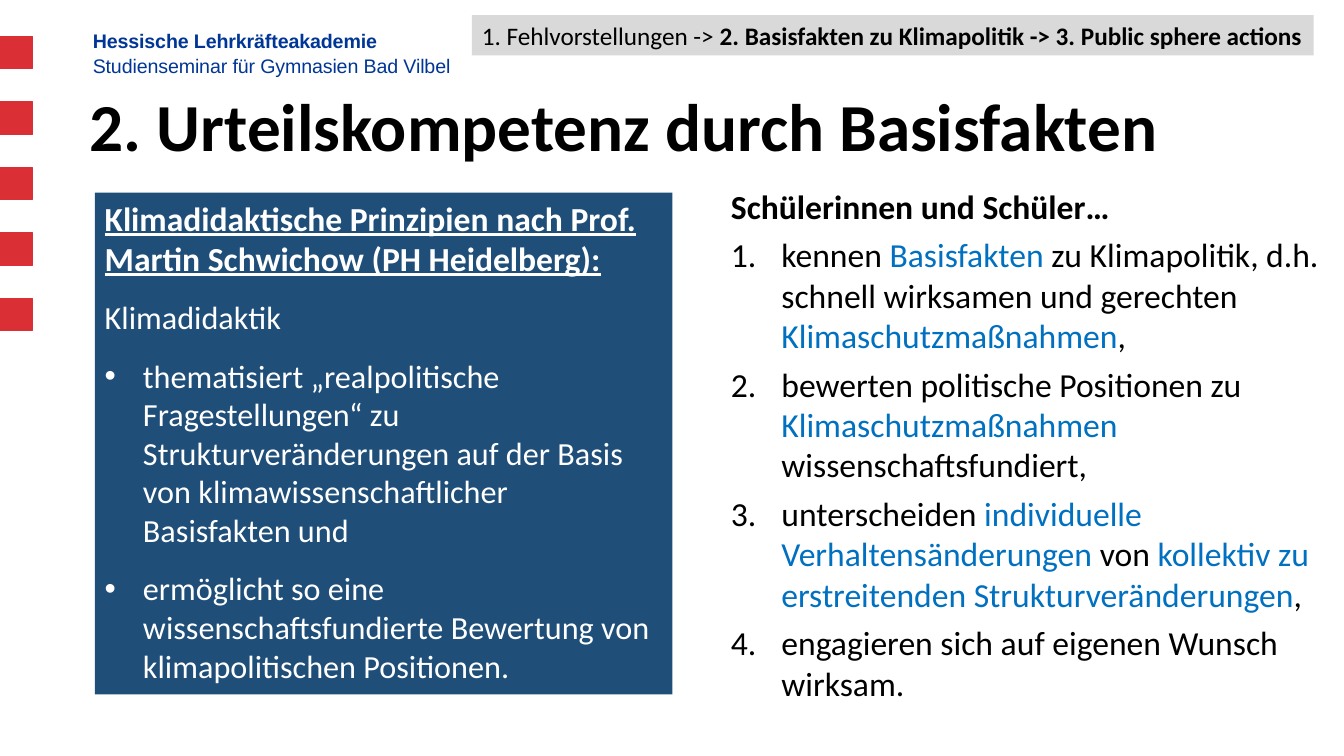
from dataclasses import dataclass

from lxml.etree import SubElement
from pptx import Presentation
from pptx.dml.color import RGBColor
from pptx.enum.shapes import MSO_SHAPE
from pptx.enum.text import MSO_ANCHOR, MSO_AUTO_SIZE, PP_ALIGN
from pptx.oxml.ns import qn
from pptx.util import Inches, Pt

RED, NAVY, GREY = "DB2F36", "1F4E79", "D9D9D9"
BLACK, WHITE, BLUE, LOGO = "000000", "FFFFFF", "0070C0", "003695"


@dataclass
class Run:
    text: str
    color: str = BLACK
    bold: bool = False
    line: bool = False
    size: float = 24
    font: str = "Calibri"
    space: int = 0


@dataclass
class Para:
    runs: list[Run]
    before: float = 0
    after: float = 0
    hang: float = 0
    mark: str = ""
    lead: float = 1


@dataclass
class Box:
    left: float
    top: float
    width: float
    height: float


def rgb(code: str) -> RGBColor:
    return RGBColor.from_string(code)


def place(shape, box: Box) -> None:
    shape.left, shape.top = Inches(box.left), Inches(box.top)
    shape.width, shape.height = Inches(box.width), Inches(box.height)


def indent(par, hang: float, mark: str) -> None:
    """Set the hanging indent and a bullet, a number ("1.") or no mark."""
    props = par._p.get_or_add_pPr()
    props.set("marL", str(Inches(hang)))
    props.set("indent", str(-Inches(hang)))
    if mark == "1.":
        SubElement(props, qn("a:buFont"), typeface="+mj-lt")
        SubElement(props, qn("a:buAutoNum"), type="arabicPeriod")
    elif mark:
        SubElement(props, qn("a:buFont"), typeface="Arial")
        SubElement(props, qn("a:buChar"), char=mark)
    else:
        SubElement(props, qn("a:buNone"))


def write(shape, paras: list[Para], anchor=MSO_ANCHOR.TOP) -> None:
    frame = shape.text_frame
    frame.word_wrap = True
    frame.auto_size = MSO_AUTO_SIZE.NONE
    frame.vertical_anchor = anchor
    for i, para in enumerate(paras):
        par = frame.add_paragraph() if i else frame.paragraphs[0]
        indent(par, para.hang, para.mark)
        par.alignment = PP_ALIGN.LEFT
        par.line_spacing = para.lead
        par.space_before, par.space_after = Pt(para.before), Pt(para.after)
        for item in para.runs:
            run = par.add_run()
            run.text = item.text
            font = run.font
            font.name, font.size = item.font, Pt(item.size)
            font.bold, font.underline = item.bold, item.line
            font.color.rgb = rgb(item.color)
            if item.space:
                run._r.get_or_add_rPr().set("spc", str(item.space))


def block(slide, box: Box, fill: str, edge: str = ""):
    """Add a filled rectangle, outlined only when an edge colour is given."""
    shape = slide.shapes.add_shape(MSO_SHAPE.RECTANGLE, 0, 0, 0, 0)
    place(shape, box)
    shape.shadow.inherit = False
    shape.fill.solid()
    shape.fill.fore_color.rgb = rgb(fill)
    if edge:
        shape.line.color.rgb = rgb(edge)
        shape.line.width = Pt(0.75)
    else:
        shape.line.fill.background()
    return shape


def goal(*runs: Run) -> Para:
    return Para(list(runs), before=6, hang=0.5, mark="1.")


def point(text: str, hang: float = 0.38, mark: str = "•") -> Para:
    return Para([Run(text, WHITE, size=23)], 6, 8, hang, mark)


def header(text: str, bold: bool, before: float) -> Para:
    return Para([Run(text, LOGO, bold, size=14, font="Arial", space=-10)], before)


def main() -> None:
    deck = Presentation()
    deck.slide_width, deck.slide_height = Inches(13.33), Inches(7.5)
    slide = deck.slides.add_slide(deck.slide_layouts[1])

    for i in range(5):
        block(slide, Box(0, 0.36 + 0.65 * i, 0.32, 0.32), RED, RED)

    school = slide.shapes.add_textbox(0, 0, 0, 0)
    place(school, Box(0.92, 0.27, 3.89, 0.5))
    frame = school.text_frame
    frame.margin_left = frame.margin_right = frame.margin_bottom = 0
    frame.margin_top = Inches(0.02)
    write(school, [
        header("Hessische Lehrkräfteakademie", True, 0),
        header("Studienseminar für Gymnasien Bad Vilbel", False, 1),
    ])

    title = slide.shapes.title
    place(title, Box(0.79, 0.89, 11.5, 0.79))
    heading = Run("2. Urteilskompetenz durch Basisfakten", bold=True, size=48)
    write(title, [Para([heading], lead=0.9)], MSO_ANCHOR.MIDDLE)

    goals = slide.placeholders[1]
    place(goals, Box(7.15, 1.79, 6.51, 5.28))
    write(goals, [
        Para([Run("Schülerinnen und Schüler…", bold=True)]),
        goal(Run("kennen "), Run("Basisfakten", BLUE),
             Run(" zu Klimapolitik, d.h. schnell wirksamen und gerechten "),
             Run("Klimaschutzmaßnahmen", BLUE), Run(",")),
        goal(Run("bewerten politische Positionen zu "),
             Run("Klimaschutzmaßnahmen ", BLUE), Run("wissenschaftsfundiert,")),
        goal(Run("unterscheiden "), Run("individuelle Verhaltensänderungen ", BLUE),
             Run("von "),
             Run("kollektiv zu erstreitenden Strukturveränderungen", BLUE),
             Run(",")),
        goal(Run("engagieren sich auf eigenen Wunsch wirksam.")),
    ])

    panel = block(slide, Box(0.94, 1.91, 5.73, 4.98), NAVY)
    theme = ("Klimadidaktische Prinzipien nach Prof. Martin Schwichow "
             "(PH Heidelberg):")
    write(panel, [
        Para([Run(theme, WHITE, bold=True, line=True)], after=8),
        point("Klimadidaktik", 0, ""),
        point("thematisiert „realpolitische Fragestellungen“ zu "
              "Strukturveränderungen auf der Basis von "
              "klimawissenschaftlicher Basisfakten und"),
        point("ermöglicht so eine wissenschaftsfundierte Bewertung von "
              "klimapolitischen Positionen."),
    ])

    trail = block(slide, Box(4.68, 0.15, 8.35, 0.4), GREY)
    write(trail, [Para([
        Run("1. Fehlvorstellungen -> ", size=18),
        Run("2. Basisfakten zu Klimapolitik -> 3. Public sphere actions",
            bold=True, size=18),
    ])])

    deck.save("out.pptx")


if __name__ == "__main__":
    main()
